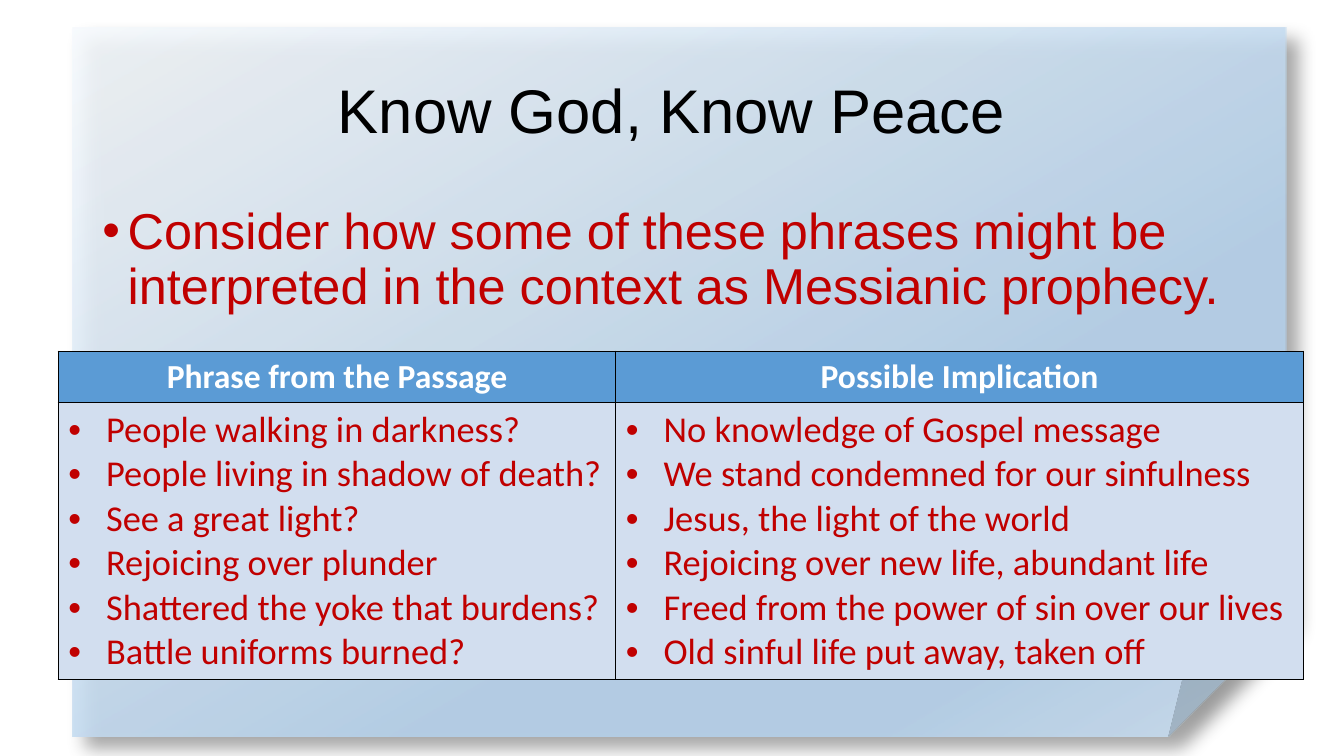
from pptx import Presentation
from pptx.dml.color import RGBColor as Color
from pptx.enum.shapes import MSO_SHAPE as Shape
from pptx.enum.text import MSO_ANCHOR as Anchor, PP_ALIGN as Align
from pptx.oxml import parse_xml
from pptx.oxml.ns import nsdecls
from pptx.util import Cm, Pt

BLACK, WHITE, RED = "000000", "FFFFFF", "C00000"
BLUE, PALE = "5B9BD5", "D2DEEF"
STOPS = [(0, "F7FAFD"), (64, "B5D2EC"), (83, "B5D2EC"), (100, "CEE1F2")]
HEADS = ["Phrase from the Passage", "Possible Implication"]
LISTS = [
    [
        "People walking in darkness?",
        "People living in shadow of death?",
        "See a great light?",
        "Rejoicing over plunder",
        "Shattered the yoke that burdens?",
        "Battle uniforms burned?",
    ],
    [
        "No knowledge of Gospel message",
        "We stand condemned for our sinfulness",
        "Jesus, the light of the world",
        "Rejoicing over new life, abundant life",
        "Freed from the power of sin over our lives",
        "Old sinful life put away, taken off",
    ],
]


def paint(code):
    return Color.from_string(code)


def node(tag, body):
    return parse_xml(f"<a:{tag} {nsdecls('a')}{body}")


def tint(code, alpha):
    return f'<a:srgbClr val="{code}"><a:alpha val="{alpha * 1000}"/></a:srgbClr>'


def style(para, name, size, code, bold=False):
    font = para.font
    font.name, font.size, font.bold = name, Pt(size), bold
    font.color.rgb = paint(code)


def bullet(para, indent):
    props = para._p.get_or_add_pPr()
    props.set("marL", str(indent))
    props.set("indent", str(-indent))
    props.append(node("buFont", ' typeface="Arial"/>'))
    props.append(node("buChar", ' char="•"/>'))


def add_sheet(slide):
    sheet = slide.shapes.add_shape(
        Shape.FOLDED_CORNER, Cm(1.83), Cm(0.69), Cm(30.6), Cm(17.86))
    sheet.line.fill.background()
    sheet.fill.background()
    sheet.shadow.inherit = False
    stops = "".join(
        f'<a:gs pos="{pos * 1000}">{tint(code, 87)}</a:gs>' for pos, code in STOPS)
    props = sheet._element.spPr
    blank = props.find("{*}noFill")
    props.replace(blank, node(
        "gradFill",
        f'><a:gsLst>{stops}</a:gsLst><a:lin ang="3600000" scaled="0"/></a:gradFill>'))
    props.find("{*}effectLst").append(node(
        "outerShdw",
        f' blurRad="{Pt(13)}" dist="{Pt(13)}" dir="2700000" algn="tl"'
        f' rotWithShape="0">{tint(BLACK, 40)}</a:outerShdw>'))


def add_text(slide, text, top, height, size, code, anchor):
    box = slide.shapes.add_textbox(Cm(2.33), Cm(top), Cm(29.21), Cm(height))
    frame = box.text_frame
    frame.word_wrap = True
    frame.vertical_anchor = anchor
    para = frame.paragraphs[0]
    para.text = text
    para.line_spacing = 0.9
    return para, size, code


def add_title(slide):
    para, size, code = add_text(
        slide, "Know God, Know Peace", 1.01, 3.68, 44, BLACK, Anchor.MIDDLE)
    para.alignment = Align.CENTER
    style(para, "Arial", size, code)


def add_body(slide):
    para, size, code = add_text(
        slide,
        "Consider how some of these phrases might be "
        "interpreted in the context as Messianic prophecy.",
        5.07, 12.09, 36, RED, Anchor.TOP)
    bullet(para, Cm(0.64))
    style(para, "Arial", size, code)


def dress(cell, code):
    cell.fill.solid()
    cell.fill.fore_color.rgb = paint(code)
    props = cell._tc.get_or_add_tcPr()
    for spot, side in enumerate(("lnL", "lnR", "lnT", "lnB")):
        props.insert(spot, node(
            side,
            f' w="{Pt(1)}"><a:solidFill><a:srgbClr val="{BLACK}"/>'
            f"</a:solidFill></a:{side}>"))


def add_grid(slide):
    grid = slide.shapes.add_table(
        2, 2, Cm(1.47), Cm(8.85), Cm(31.38), Cm(8.27)).table
    for col, width in zip(grid.columns, (14.05, 17.33)):
        col.width = Cm(width)
    for row, height in zip(grid.rows, (1.29, 6.98)):
        row.height = Cm(height)
    for col, (head, items) in enumerate(zip(HEADS, LISTS)):
        top, low = grid.cell(0, col), grid.cell(1, col)
        dress(top, BLUE)
        dress(low, PALE)
        top.text = head
        para = top.text_frame.paragraphs[0]
        para.alignment = Align.CENTER
        style(para, "Calibri", 24, WHITE, True)
        low.text = "\n".join(items)
        for para in low.text_frame.paragraphs:
            bullet(para, Cm(0.95))
            style(para, "Calibri", 26, RED)


def main():
    deck = Presentation()
    deck.slide_width, deck.slide_height = Cm(33.87), Cm(19.05)
    slide = deck.slides.add_slide(deck.slide_layouts[6])
    add_sheet(slide)
    add_title(slide)
    add_body(slide)
    add_grid(slide)
    deck.save("out.pptx")


if __name__ == "__main__":
    main()
